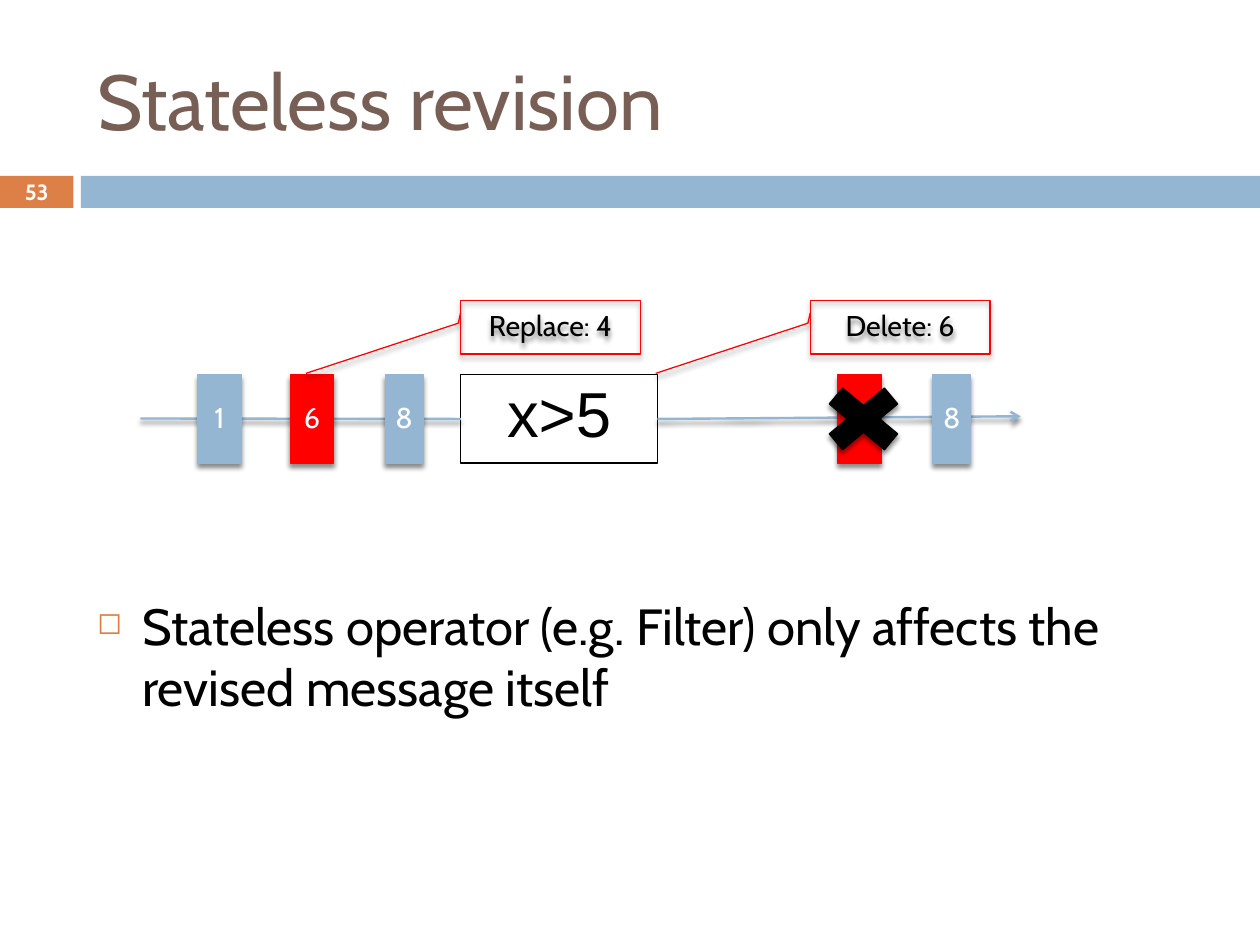
from lxml import etree
from pptx import Presentation
from pptx import util as u
from pptx.dml.color import RGBColor
from pptx.enum import shapes, text
from pptx.oxml.ns import qn

COLORS = {
    "blue": "94B6D2",
    "orange": "DD8047",
    "brown": "775F55",
    "red": "FF0000",
    "black": "000000",
    "white": "FFFFFF",
}
SHAPE = shapes.MSO_SHAPE
ROW_TOP, ROW_HEIGHT = 8.33, 1.96
CALLOUT_POINTS = (0.227, -0.001, 0.423, -0.014, 1.36, -0.862)


def color(name):
    return RGBColor.from_string(COLORS[name])


def add_xml(parent, tag, **attributes):
    return etree.SubElement(parent, qn(tag), attributes)


def add_shadow(item):
    """Drop a soft black shadow straight down; call after the line is set."""
    effects = add_xml(item._element.spPr, "a:effectLst")
    shadow = add_xml(effects, "a:outerShdw", blurRad=str(u.Pt(3)),
                     dist=str(u.Pt(2.4)), dir="5400000", rotWithShape="0")
    shade = add_xml(shadow, "a:srgbClr", val=COLORS["black"])
    add_xml(shade, "a:alpha", val="45000")


def write(box, words, size, ink, font="Cabin", bold=False, spacing=None,
          align=text.PP_ALIGN.CENTER, anchor=text.MSO_ANCHOR.MIDDLE,
          margins=(0, 0)):
    frame = box.text_frame
    frame.word_wrap = True
    frame.vertical_anchor = anchor
    frame.margin_left = frame.margin_right = u.Cm(margins[0])
    frame.margin_top = frame.margin_bottom = u.Cm(margins[1])
    para = frame.paragraphs[0]
    para.text = words
    para.alignment = align
    para.line_spacing = spacing
    para.font.name = font
    para.font.size = u.Pt(size)
    para.font.bold = bold
    para.font.color.rgb = color(ink)
    return para


def add_box(page, kind, place, fill=None, line=None, width=0.79, shadow=False):
    box = page.shapes.add_shape(kind, *map(u.Cm, place))
    if fill:
        box.fill.solid()
        box.fill.fore_color.rgb = color(fill)
    else:
        box.fill.background()
    if line:
        box.line.color.rgb = color(line)
        box.line.width = u.Pt(width)
    else:
        box.line.fill.background()
    if shadow:
        add_shadow(box)
    else:
        box.shadow.inherit = False
    return box


def add_text(page, place, words, size, ink, anchor):
    box = page.shapes.add_textbox(*map(u.Cm, place))
    return write(box, words, size, ink, align=text.PP_ALIGN.LEFT,
                 anchor=anchor, margins=(0.28, 0.15))


def add_bullet(para):
    properties = para._p.get_or_add_pPr()
    properties.set("marL", str(u.Cm(1)))
    properties.set("indent", str(u.Cm(-1)))
    tint = add_xml(properties, "a:buClr")
    add_xml(tint, "a:srgbClr", val=COLORS["orange"])
    add_xml(properties, "a:buSzPct", val="60000")
    add_xml(properties, "a:buChar", char="◻")


def add_stream(page, start, end):
    points = map(u.Cm, (*start, *end))
    stream = page.shapes.add_connector(shapes.MSO_CONNECTOR.STRAIGHT, *points)
    stream.line.color.rgb = color("blue")
    stream.line.width = u.Pt(1.5)
    add_shadow(stream)
    return stream


def add_message(page, left, width, value, fill):
    box = add_box(page, SHAPE.RECTANGLE, (left, ROW_TOP, width, ROW_HEIGHT),
                  fill, fill, shadow=True)
    write(box, value, 18, "white", spacing=0.93)


def add_callout(page, left, words):
    box = add_box(page, SHAPE.LINE_CALLOUT_2, (left, 6.68, 3.99, 1.19),
                  line="red", shadow=True)
    for index, value in enumerate(CALLOUT_POINTS):
        box.adjustments[index] = value
    write(box, words, 18, "black", spacing=0.93)


def add_header(page):
    number = add_box(page, SHAPE.RECTANGLE, (0, 3.91, 1.63, 0.71), "orange")
    write(number, "53", 13.9, "white", bold=True)
    add_box(page, SHAPE.RECTANGLE, (1.8, 3.91, 26.2, 0.71), "blue")
    add_text(page, (1.88, 0.71, 24.97, 3.02), "Stateless revision", 49,
             "brown", text.MSO_ANCHOR.MIDDLE)


def add_diagram(page):
    operator = add_box(page, SHAPE.RECTANGLE, (10.24, ROW_TOP, 4.37, ROW_HEIGHT),
                       line="black", width=0.75)
    write(operator, "x>5", 40, "black", font="Arial", spacing=0.93,
          anchor=text.MSO_ANCHOR.TOP, margins=(0.25, 0.13))

    middle = ROW_TOP + ROW_HEIGHT / 2
    incoming = add_stream(page, (3.12, 9.3), (10.24, middle))
    incoming.end_connect(operator, 1)
    outgoing = add_stream(page, (14.61, middle), (22.68, 9.25))
    outgoing.begin_connect(operator, 3)
    add_xml(outgoing.line._get_or_add_ln(), "a:tailEnd", type="arrow")

    for left, width, value, fill in (
        (4.39, 0.97, "1", "blue"),
        (6.45, 0.97, "6", "red"),
        (8.56, 0.84, "8", "blue"),
        (18.62, 0.97, "6", "red"),
        (20.73, 0.84, "8", "blue"),
    ):
        add_message(page, left, width, value, fill)
    add_callout(page, 10.24, "Replace: 4")
    add_callout(page, 18.01, "Delete: 6")
    add_box(page, SHAPE.MATH_MULTIPLY, (18.01, ROW_TOP, 2.36, ROW_HEIGHT),
            "black", "black", shadow=True)


def main():
    deck = Presentation()
    deck.slide_width, deck.slide_height = u.Cm(28), u.Cm(21)
    page = deck.slides.add_slide(deck.slide_layouts[6])
    add_header(page)
    add_diagram(page)
    statement = add_text(
        page, (1.88, 13.06, 24.97, 3.2),
        "Stateless operator (e.g. Filter) only affects the revised message itself",
        32, "black", text.MSO_ANCHOR.TOP)
    add_bullet(statement)
    deck.save("out.pptx")


if __name__ == "__main__":
    main()
